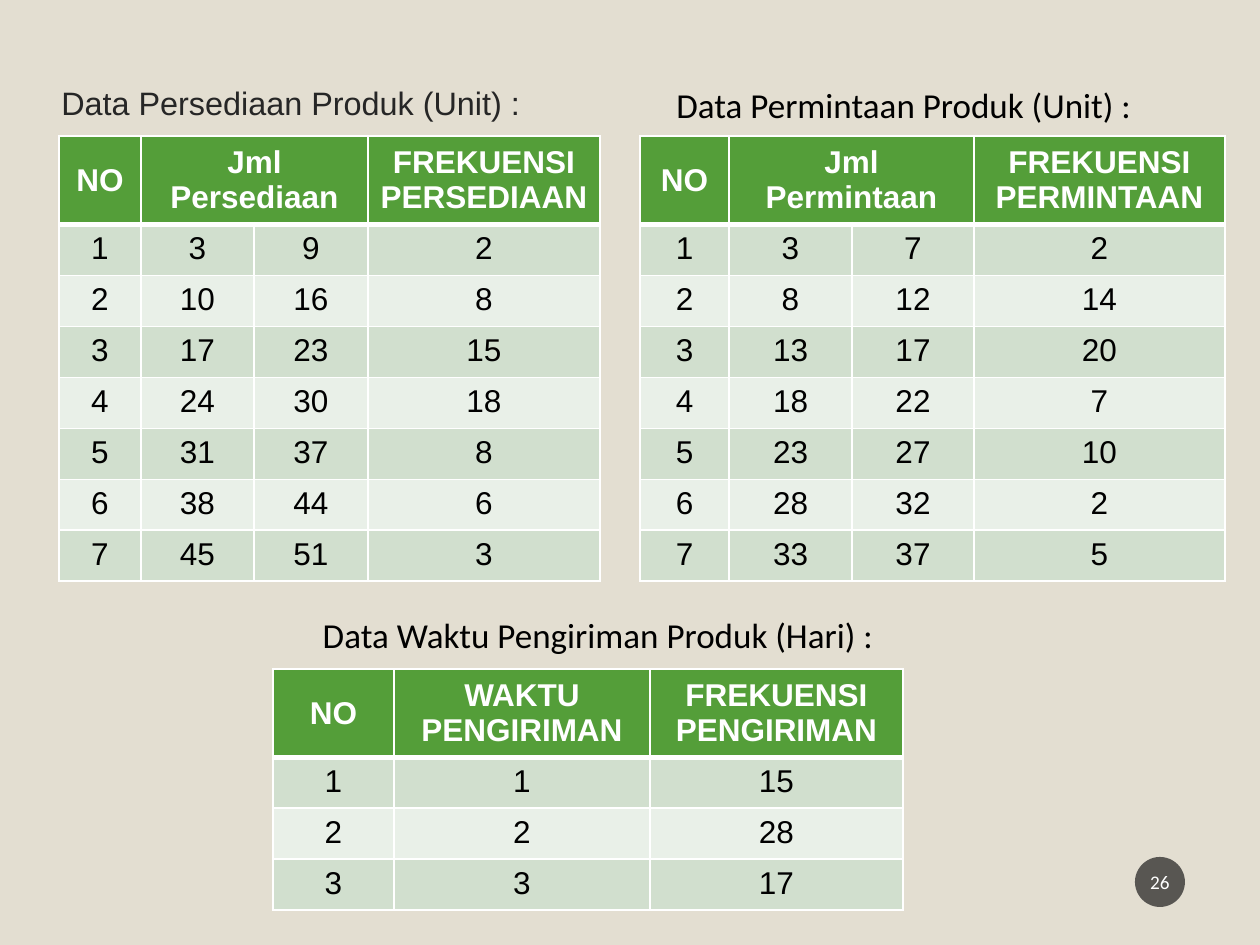
from pptx import Presentation
from pptx.dml.color import RGBColor
from pptx.enum.shapes import MSO_SHAPE
from pptx.enum.text import MSO_ANCHOR, PP_ALIGN
from pptx.oxml.ns import qn
from pptx.util import Emu, Pt
from lxml.etree import SubElement

SCALE = 914400 / 126
HEADER_H, ROW_H = 82, 51
WHITE, BLACK, GREEN = "FFFFFF", "000000", "549E39"
BANDS = ("D1DFCE", "E9F0E8")
HEADER_FONT = {"name": "Arial", "size": Pt(18), "bold": True}
BODY_FONT = {**HEADER_FONT, "bold": False}
CAPTION_FONT = {"name": "Calibri", "size": Pt(20)}

SUPPLY = [(1, 3, 9, 2), (2, 10, 16, 8), (3, 17, 23, 15), (4, 24, 30, 18),
          (5, 31, 37, 8), (6, 38, 44, 6), (7, 45, 51, 3)]
DEMAND = [(1, 3, 7, 2), (2, 8, 12, 14), (3, 13, 17, 20), (4, 18, 22, 7),
          (5, 23, 27, 10), (6, 28, 32, 2), (7, 33, 37, 5)]
DELIVERY = [(1, 1, 15), (2, 2, 28), (3, 3, 17)]


def px(n):
    return Emu(round(n * SCALE))


def rgb(value):
    return RGBColor.from_string(value)


def apply(obj, values):
    for name, value in values.items():
        setattr(obj, name, value)


def write(tf, text, font, color, align=PP_ALIGN.CENTER):
    for i, line in enumerate(text.split("\n")):
        p = tf.add_paragraph() if i else tf.paragraphs[0]
        p.alignment = align
        r = p.add_run()
        r.text = line
        apply(r.font, font)
        r.font.color.rgb = rgb(color)


def add_caption(s, box, text, font, color=BLACK, align=PP_ALIGN.LEFT, before=5.8, indent=38):
    tf = s.shapes.add_textbox(*map(px, box)).text_frame
    tf.word_wrap = True
    write(tf, text, font, color, align)
    p = tf.paragraphs[0]
    p.space_before = Pt(before)
    pPr = p._p.get_or_add_pPr()
    pPr.set("marL", str(px(indent)))
    pPr.set("indent", str(px(-indent)))


def set_borders(cell, top, bottom):
    tcPr = cell._tc.get_or_add_tcPr()
    for side, width in (("L", 1), ("R", 1), ("T", top), ("B", bottom)):
        ln = SubElement(tcPr, qn(f"a:ln{side}"), w=str(Pt(width)))
        fill = SubElement(ln, qn("a:solidFill"))
        SubElement(fill, qn("a:srgbClr"), val=WHITE)


def format_cell(cell, row):
    set_borders(cell, 3 if row == 1 else 1, 1 if row else 3)
    cell.fill.solid()
    cell.fill.fore_color.rgb = rgb(BANDS[(row - 1) % 2] if row else GREEN)
    apply(cell, {
        "margin_left": px(10), "margin_right": px(10),
        "vertical_anchor": MSO_ANCHOR.TOP if row else MSO_ANCHOR.MIDDLE,
    })


def add_data_table(s, left, top, widths, headers, data):
    rows = [headers, *data]
    height = HEADER_H + ROW_H * len(data)
    table = s.shapes.add_table(len(rows), len(widths), px(left), px(top),
                               px(sum(widths)), px(height)).table
    for col, width in zip(table.columns, widths):
        col.width = px(width)
    for i, values in enumerate(rows):
        table.rows[i].height = px(ROW_H if i else HEADER_H)
        font, color = (BODY_FONT, BLACK) if i else (HEADER_FONT, WHITE)
        for j, value in enumerate(values):
            cell = table.cell(i, j)
            format_cell(cell, i)
            if value is None:
                table.cell(i, j - 1).merge(cell)
            else:
                write(cell.text_frame, str(value), font, color)


def add_page_number(s, box, number):
    sp = s.shapes.add_shape(MSO_SHAPE.OVAL, *map(px, box))
    sp.shadow.inherit = False
    sp.fill.solid()
    sp.fill.fore_color.rgb = rgb("1D1D1D")
    color = sp._element.spPr.find(qn("a:solidFill"))[0]
    SubElement(color, qn("a:alpha"), val="70000")
    sp.line.fill.background()
    tf = sp.text_frame
    apply(tf, {"margin_left": px(2), "margin_right": px(2),
               "vertical_anchor": MSO_ANCHOR.MIDDLE})
    write(tf, number, {"name": "Calibri", "size": Pt(11)}, WHITE)


def main():
    prs = Presentation()
    apply(prs, {"slide_width": px(1260), "slide_height": px(945)})
    s = prs.slides.add_slide(prs.slide_layouts[6])
    s.background.fill.solid()
    s.background.fill.fore_color.rgb = rgb("E3DED1")

    add_caption(s, (49, 77, 517, 67), "Data Persediaan Produk (Unit) :",
                {"name": "Arial", "size": Pt(18.5)}, "262626", before=10, indent=32)
    add_data_table(s, 59, 136, (82, 113, 114, 232),
                   ("NO", "Jml Persediaan", None, "FREKUENSI\nPERSEDIAAN"), SUPPLY)
    add_page_number(s, (1135, 857, 50, 50), "26")
    add_caption(s, (664, 77, 517, 67), "Data Permintaan Produk (Unit) :", CAPTION_FONT)
    add_data_table(s, 640, 136, (89, 123, 122, 251),
                   ("NO", "Jml Permintaan", None, "FREKUENSI\nPERMINTAAN"), DEMAND)
    add_caption(s, (273, 607, 650, 67), "Data Waktu Pengiriman Produk (Hari) :",
                CAPTION_FONT, align=PP_ALIGN.CENTER)
    add_data_table(s, 273, 669, (121, 256, 253),
                   ("NO", "WAKTU PENGIRIMAN", "FREKUENSI PENGIRIMAN"), DELIVERY)
    prs.save("out.pptx")


if __name__ == "__main__":
    main()
